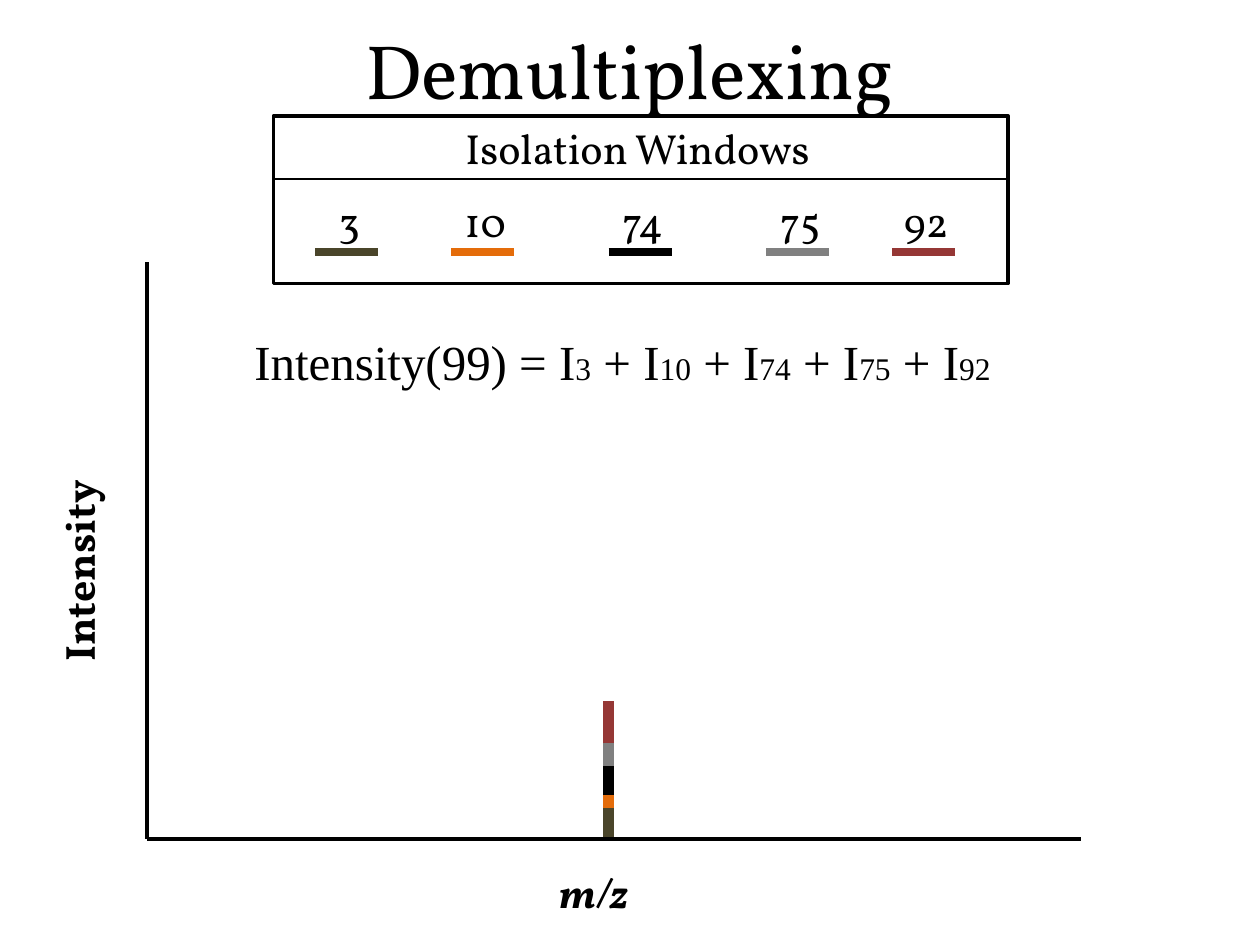
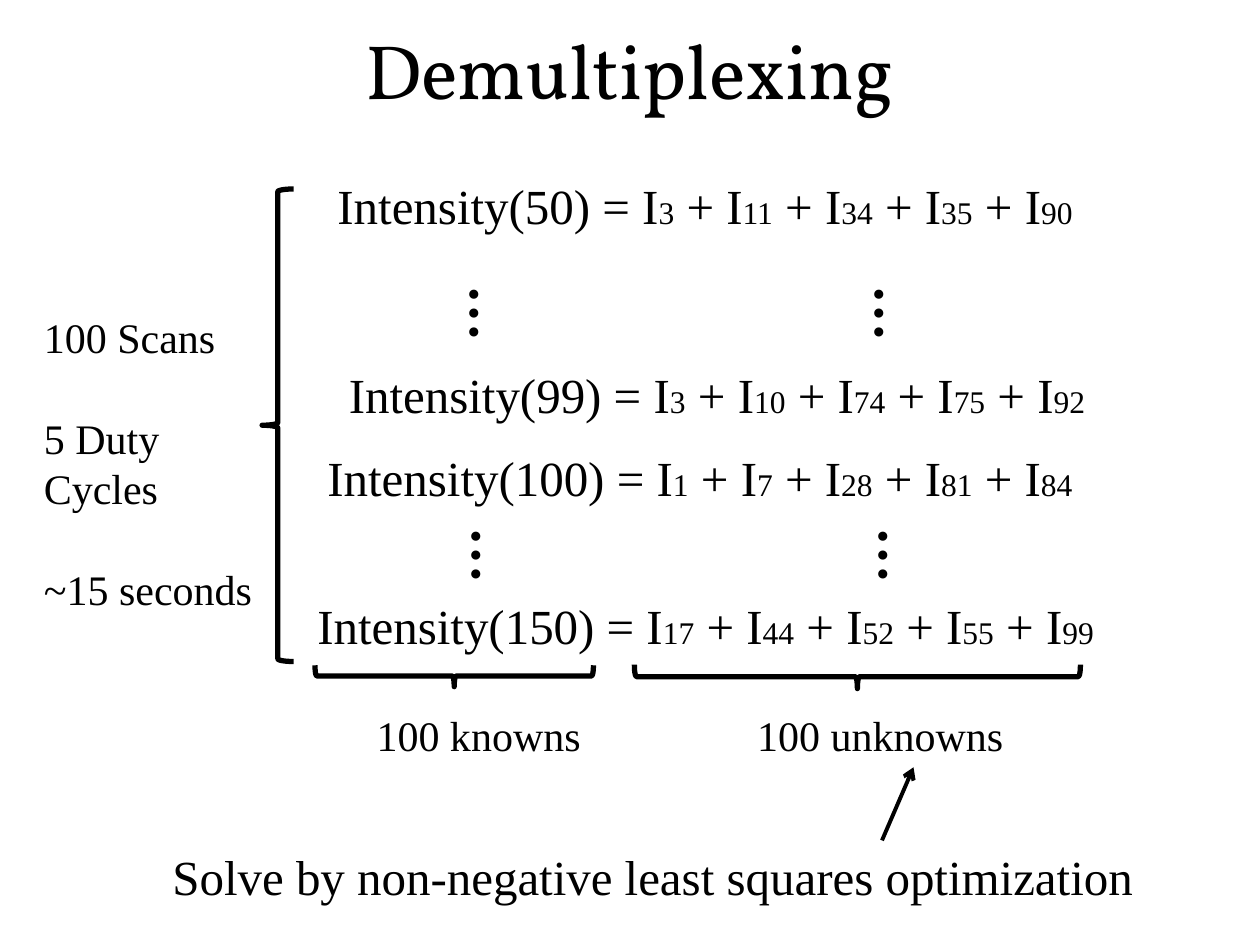
"""Build two slides on demultiplexing isolation windows."""
from lxml.etree import SubElement
from pptx import Presentation
from pptx.dml.color import RGBColor
from pptx.enum.shapes import MSO_CONNECTOR, MSO_SHAPE
from pptx.enum.text import MSO_ANCHOR, MSO_AUTO_SIZE, PP_ALIGN
from pptx.oxml.ns import qn
from pptx.util import Inches, Pt

BLACK = RGBColor(0x00, 0x00, 0x00)
WHITE = RGBColor(0xFF, 0xFF, 0xFF)
OLIVE = RGBColor(0x4A, 0x45, 0x2A)
ORANGE = RGBColor(0xE4, 0x6C, 0x0A)
GRAY = RGBColor(0x80, 0x80, 0x80)
RED = RGBColor(0x95, 0x37, 0x35)
SERIF = "Times New Roman"
DISPLAY = "Vollkorn"
TITLE = "Demultiplexing"

# window, colour, legend left, peak bottom, peak top
WINDOWS = [
    (3, OLIVE, 2.5, 6.66, 6.37),
    (10, ORANGE, 3.58, 6.41, 6.27),
    (74, BLACK, 4.83, 6.31, 6.06),
    (75, GRAY, 6.08, 6.08, 5.9),
    (92, RED, 7.08, 5.9, 5.56),
]
ORIGIN = (1.17, 6.66)
AXIS_ENDS = [(1.17, 2.08), (8.58, 6.66)]
PEAK_X = 4.83

SCAN_99 = (99, [3, 10, 74, 75, 92])
EQUATIONS = [
    (50, [3, 11, 34, 35, 90], 2.58, 1.34, 6.25),
    (*SCAN_99, 2.67, 2.84, 6.25),
    (100, [1, 7, 28, 81, 84], 2.5, 3.5, 6.25),
    (150, [17, 44, 52, 55, 99], 2.42, 4.68, 6.75),
]
ELLIPSES = [(3.58, 2.17), (6.8, 2.17), (3.6, 4.09), (6.83, 4.09)]
BRACES = [
    (2.08, 1.5, 0.25, 3.75, 0),
    (3.52, 4.26, 0.17, 2.21, 270),
    (6.71, 3.6, 0.19, 3.54, 270),
]
SCAN_NOTES = [("100 Scans", 0), ("5 Duty", 29), ("Cycles", 0), ("~15 seconds", 29)]
CAPTIONS = [
    ("100 knowns", 2.89, 5.58, 1.84, 0.5, 24),
    ("100 unknowns", 5.91, 5.58, 2.18, 0.5, 24),
    ("Solve by non-negative least squares optimization", 1.27, 6.67, 7.9, 0.57, 28),
]


def add_text(shapes, text, left, top, width, height, size=24, font=SERIF, bold=False,
             italic=False, align=PP_ALIGN.LEFT, wrap=True, rotation=0,
             anchor=MSO_ANCHOR.TOP, fit=MSO_AUTO_SIZE.SHAPE_TO_FIT_TEXT):
    """Add text given as a string or as paragraphs of (spans, space before)."""
    box = shapes.add_textbox(Inches(left), Inches(top), Inches(width), Inches(height))
    box.rotation = rotation
    frame = box.text_frame
    frame.word_wrap, frame.auto_size, frame.vertical_anchor = wrap, fit, anchor
    paragraphs = [([(text, size)], 0)] if isinstance(text, str) else text
    for index, (spans, space) in enumerate(paragraphs):
        para = frame.add_paragraph() if index else frame.paragraphs[0]
        para.alignment, para.space_before = align, Pt(space)
        for words, points in spans:
            span = para.add_run()
            span.text = words
            span.font.name, span.font.size = font, Pt(points)
            span.font.bold, span.font.italic = bold, italic
            span.font.color.rgb = BLACK
    return box


def add_line(shapes, start, end, color=BLACK, weight=2.25, arrow=False):
    """Draw a straight line, with an arrowhead at its end if asked."""
    points = [Inches(value) for value in (*start, *end)]
    line = shapes.add_connector(MSO_CONNECTOR.STRAIGHT, *points)
    line.line.color.rgb, line.line.width = color, Pt(weight)
    if arrow:
        SubElement(line.line._get_or_add_ln(), qn("a:tailEnd"), type="arrow")
    SubElement(line._element.spPr, qn("a:effectLst"))


def add_outline(shapes, kind, left, top, width, height, weight, fill=None, rotation=0):
    """Draw a black outlined preset shape."""
    shape = shapes.add_shape(kind, Inches(left), Inches(top), Inches(width), Inches(height))
    shape.shadow.inherit = False
    shape.rotation = rotation
    shape.line.color.rgb, shape.line.width = BLACK, Pt(weight)
    if fill is None:
        shape.fill.background()
    else:
        shape.fill.solid()
        shape.fill.fore_color.rgb = fill


def add_equation(shapes, scan, windows, left, top, width):
    """Write a scan's intensity as a sum of its window intensities."""
    spans = []
    for index, window in enumerate(windows):
        spans.append((" + I" if index else f"Intensity({scan}) = I", 28))
        spans.append((str(window), 18))
    add_text(shapes, [(spans, 0)], left, top, width, 0.57)


def add_page(deck):
    """Add a blank page with the shared title."""
    page = deck.slides.add_slide(deck.slide_layouts[6])
    add_text(page.shapes, TITLE, 0.5, -0.08, 9, 1.25, size=44, font=DISPLAY,
             align=PP_ALIGN.CENTER, anchor=MSO_ANCHOR.MIDDLE, fit=MSO_AUTO_SIZE.NONE)
    return page.shapes


def add_legend(shapes):
    """Draw the framed key of isolation windows."""
    legend = shapes.add_group_shape().shapes
    label = dict(font=DISPLAY, align=PP_ALIGN.CENTER)
    add_outline(legend, MSO_SHAPE.RECTANGLE, 2.17, 0.92, 5.83, 1.33, 2, fill=WHITE)
    for window, color, left, _, _ in WINDOWS:
        add_line(legend, (left, 2), (left + 0.5, 2), color, 5)
        add_text(legend, str(window), left - 0.04, 1.5, 0.62, 0.5, **label)
    add_text(legend, "Isolation Windows", 2.62, 0.92, 4.88, 0.5, **label)
    add_line(legend, (2.17, 1.42), (8, 1.42), weight=0.75)


def build_spectrum(deck):
    """Show one peak as a stack of window intensities."""
    shapes = add_page(deck)
    for _, color, _, bottom, top in WINDOWS:
        add_line(shapes, (PEAK_X, bottom), (PEAK_X, top), color, 6)
    for end in AXIS_ENDS:
        add_line(shapes, ORIGIN, end)
    axis_title = dict(font=DISPLAY, bold=True, align=PP_ALIGN.CENTER)
    add_text(shapes, "m/z", 3.67, 6.83, 2.08, 0.5, italic=True, **axis_title)
    add_text(shapes, "Intensity", -0.42, 4.28, 2.08, 0.5, rotation=270, **axis_title)
    add_legend(shapes)
    add_equation(shapes, *SCAN_99, 1.92, 2.58, 6.25)


def build_system(deck):
    """Show the system of equations and how it is solved."""
    shapes = add_page(deck)
    for left, top in ELLIPSES:
        add_text(shapes, "…", left, top, 0.65, 0.64, size=32, bold=True,
                 wrap=False, rotation=90)
    for equation in EQUATIONS:
        add_equation(shapes, *equation)
    for left, top, width, height, rotation in BRACES:
        add_outline(shapes, MSO_SHAPE.LEFT_BRACE, left, top, width, height, 3,
                    rotation=rotation)
    notes = [([(words, 24)], space) for words, space in SCAN_NOTES]
    add_text(shapes, notes, 0.25, 2.42, 1.87, 2.52, wrap=False)
    for words, left, top, width, height, size in CAPTIONS:
        add_text(shapes, words, left, top, width, height, size=size, wrap=False)
    add_line(shapes, (7, 6.67), (7.25, 6.09), arrow=True)


def main():
    """Build and save the deck."""
    deck = Presentation()
    deck.slide_width, deck.slide_height = Inches(10), Inches(7.5)
    build_spectrum(deck)
    build_system(deck)
    deck.save("out.pptx")


if __name__ == "__main__":
    main()
